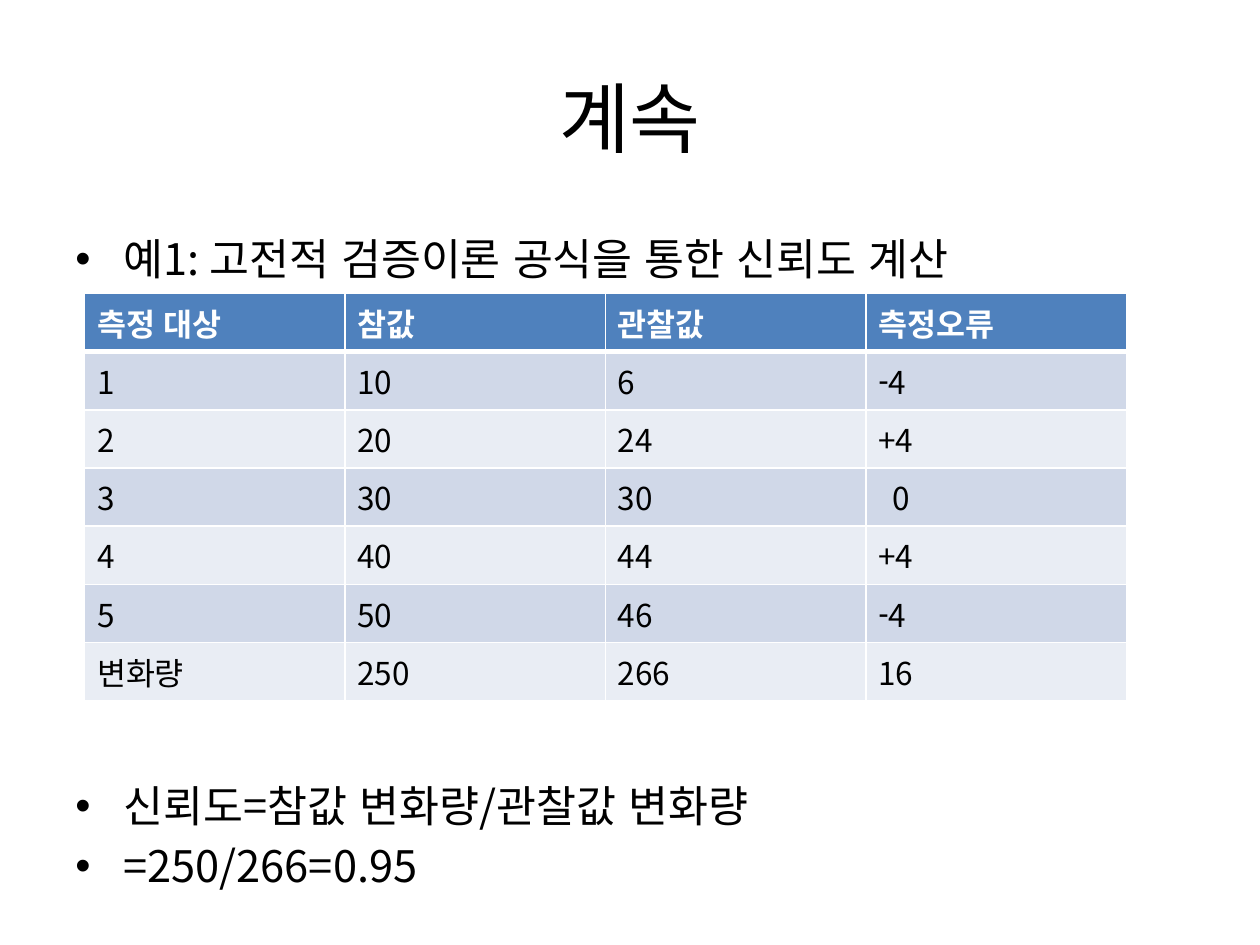
from lxml.etree import SubElement
from pptx import Presentation
from pptx.dml.color import RGBColor
from pptx.enum.lang import MSO_LANGUAGE_ID
from pptx.enum.text import MSO_ANCHOR, PP_ALIGN
from pptx.oxml.ns import qn
from pptx.util import Inches, Pt

FONT = "Noto Sans CJK KR"
BLACK = RGBColor(0x00, 0x00, 0x00)
WHITE = RGBColor(0xFF, 0xFF, 0xFF)
HEADER_BLUE = RGBColor(0x4F, 0x81, 0xBD)
BAND_DARK = RGBColor(0xD0, 0xD8, 0xE8)
BAND_LIGHT = RGBColor(0xE9, 0xED, 0xF4)

BASE_FORMAT = {"name": FONT, "language_id": MSO_LANGUAGE_ID.KOREAN}
TITLE_FORMAT = {"size": Pt(44), "bold": False}
BULLET_FORMAT = {"size": Pt(24.8), "bold": False}
HEADER_FORMAT = {"size": Pt(18), "bold": True}
CELL_FORMAT = {"size": Pt(18), "bold": False}
BULLET_SPACING = {"line_spacing": Pt(34.3), "space_before": Pt(0)}

MEASUREMENTS = [
    ["측정 대상", "참값", "관찰값", "측정오류"],
    ["1", "10", "6", "-4"],
    ["2", "20", "24", "+4"],
    ["3", "30", "30", "0"],
    ["4", "40", "44", "+4"],
    ["5", "50", "46", "-4"],
    ["변화량", "250", "266", "16"],
]


def apply_format(target, values):
    """Set each attribute named in values on the target."""
    for name, value in values.items():
        setattr(target, name, value)


def write_text(para, text, values, color=BLACK):
    """Add one formatted run, with the font set for East Asian text too."""
    span = para.add_run()
    span.text = text
    apply_format(span.font, {**BASE_FORMAT, **values})
    span.font.color.rgb = color
    SubElement(span.font._element, qn("a:ea"), typeface=FONT)


def add_bullet(para, mark, hang):
    """Give a paragraph a bullet mark with a hanging indent."""
    properties = para._p.get_or_add_pPr()
    properties.set("marL", str(hang))
    properties.set("indent", str(-hang))
    SubElement(properties, qn("a:buFont"), typeface="Arial")
    SubElement(properties, qn("a:buChar"), char=mark)


def add_text_frame(page, box, anchor):
    """Add a wrapping text box and return its frame."""
    frame = page.shapes.add_textbox(*map(Inches, box)).text_frame
    apply_format(frame, {"word_wrap": True, "vertical_anchor": anchor})
    return frame


def add_title(page, box, text):
    """Place the centred slide title."""
    para = add_text_frame(page, box, MSO_ANCHOR.MIDDLE).paragraphs[0]
    para.alignment = PP_ALIGN.CENTER
    write_text(para, text, TITLE_FORMAT)


def add_bullets(page, box, lines):
    """Place a bulleted list with hanging indents."""
    frame = add_text_frame(page, box, MSO_ANCHOR.TOP)
    for index, line in enumerate(lines):
        para = frame.add_paragraph() if index else frame.paragraphs[0]
        apply_format(para, BULLET_SPACING)
        add_bullet(para, "•", Inches(0.38))
        write_text(para, line, BULLET_FORMAT)


def add_borders(cell, widths):
    """Draw white cell borders, with widths in points by side."""
    properties = cell._tc.get_or_add_tcPr()
    for index, (side, width) in enumerate(widths.items()):
        line = properties.makeelement(qn(f"a:ln{side}"), {"w": str(Pt(width))})
        fill = SubElement(line, qn("a:solidFill"))
        SubElement(fill, qn("a:srgbClr"), val=str(WHITE))
        properties.insert(index, line)


def add_measurement_table(page, box, rows):
    """Place the banded table of true values, observations and errors."""
    left, top, width, height = map(Inches, box)
    table = page.shapes.add_table(len(rows), len(rows[0]), left, top, width, height).table
    for row_index, row in enumerate(rows):
        header = row_index == 0
        band = BAND_DARK if row_index % 2 else BAND_LIGHT
        for column_index, text in enumerate(row):
            cell = table.cell(row_index, column_index)
            para = cell.text_frame.paragraphs[0]
            cell.vertical_anchor = MSO_ANCHOR.MIDDLE
            if text == "0":
                cell.margin_left = Inches(0.21)
            if text.startswith("-"):
                add_bullet(para, "-", Inches(0))
            cell.fill.solid()
            cell.fill.fore_color.rgb = HEADER_BLUE if header else band
            add_borders(cell, {"L": 1, "R": 1, "T": 3 if row_index == 1 else 1, "B": 3 if header else 1})
            write_text(
                para,
                text.removeprefix("-"),
                HEADER_FORMAT if header else CELL_FORMAT,
                WHITE if header else BLACK,
            )


def main():
    """Build and save the reliability slide."""
    deck = Presentation()
    apply_format(deck, {"slide_width": Inches(10), "slide_height": Inches(7.5)})
    page = deck.slides.add_slide(deck.slide_layouts[6])
    add_title(page, (0.5, 0.3, 9, 1.25), "계속")
    add_bullets(page, (0.5, 1.73, 9, 0.55), ["예1: 고전적 검증이론 공식을 통한 신뢰도 계산"])
    add_measurement_table(page, (0.67, 2.33, 8.27, 3.23), MEASUREMENTS)
    add_bullets(page, (0.5, 6.07, 9, 1.05), ["신뢰도=참값 변화량/관찰값 변화량", "=250/266=0.95"])
    deck.save("out.pptx")


if __name__ == "__main__":
    main()
